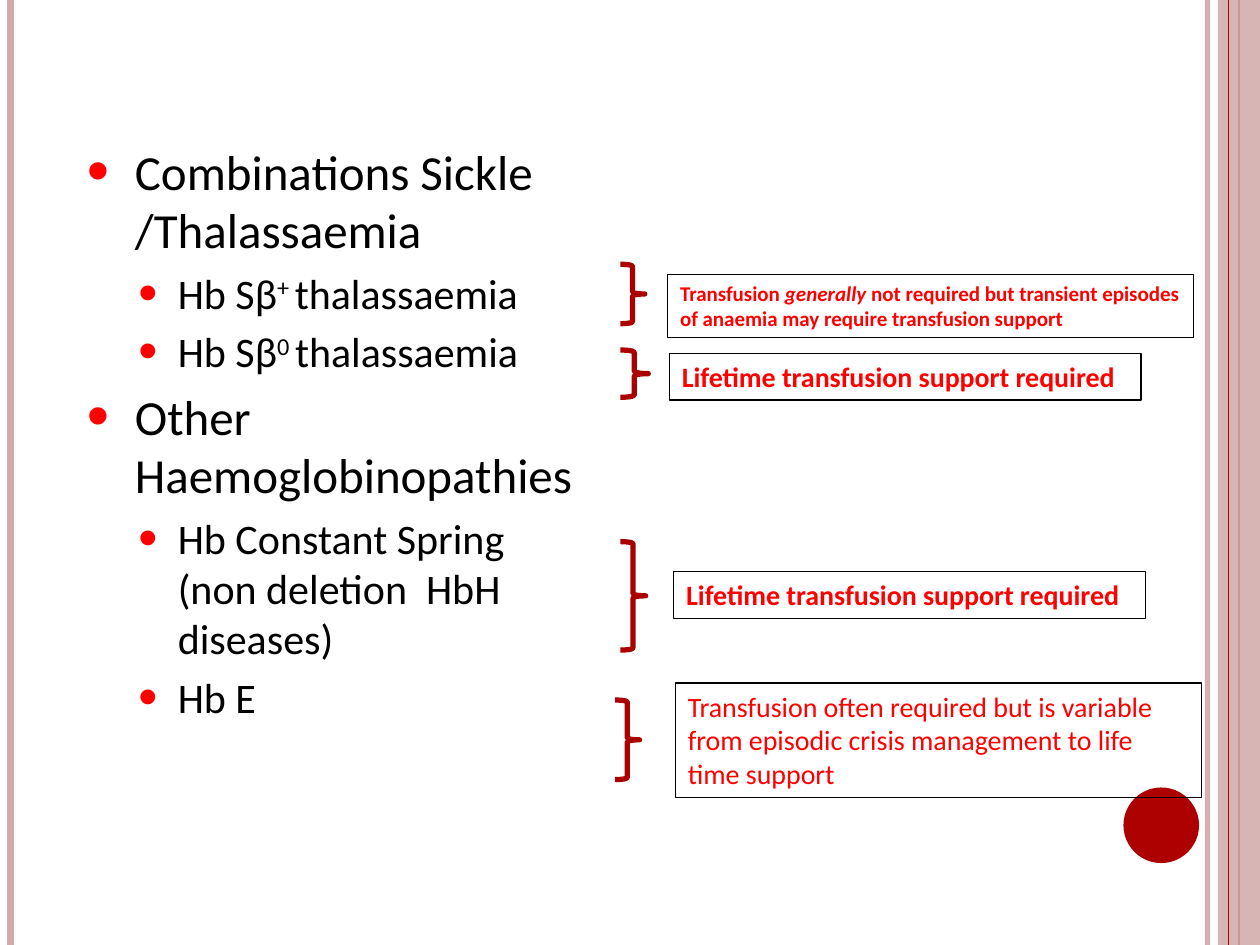
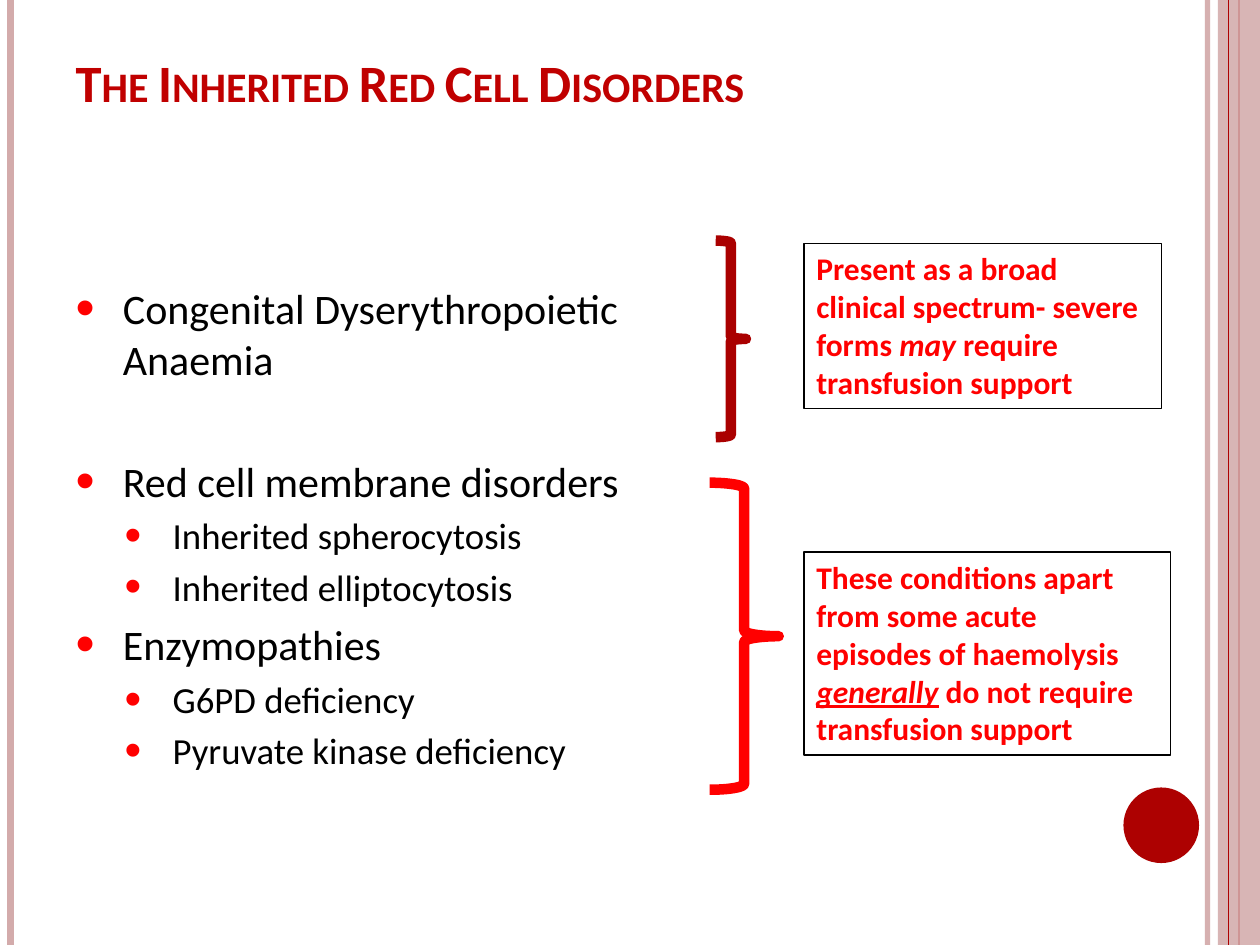
from lxml import etree
from pptx import Presentation
from pptx.dml.color import RGBColor
from pptx.enum.shapes import MSO_CONNECTOR, MSO_SHAPE
from pptx.enum.text import MSO_ANCHOR, MSO_AUTO_SIZE, PP_ALIGN
from pptx.oxml.ns import qn
from pptx.util import Pt

STRAIGHT = MSO_CONNECTOR.STRAIGHT
RECTANGLE, OVAL, BRACE = MSO_SHAPE.RECTANGLE, MSO_SHAPE.OVAL, MSO_SHAPE.RIGHT_BRACE
TOP, MIDDLE = MSO_ANCHOR.TOP, MSO_ANCHOR.MIDDLE
FIXED, GROW = MSO_AUTO_SIZE.NONE, MSO_AUTO_SIZE.SHAPE_TO_FIT_TEXT
LEFT = PP_ALIGN.LEFT

FONT = "Calibri"
COLORS = {"text": "000000", "accent": "FF0000", "title": "C00000",
          "band": "D3ABAB", "rule": "AD0101", "brace": "AA0000"}
PAGE_BOX = (0, 0, 720, 540)
INDENTS = {0: (27, -27), 1: (55.5, -27.5), 2: (80, -22.5)}


def color(name):
    """Return the named colour."""
    return RGBColor.from_string(COLORS[name])


def place(shape, box):
    """Move and size a shape to a box in points."""
    shape.left, shape.top, shape.width, shape.height = map(Pt, box)


def set_opacity(shape, percent):
    """Make the solid colour of a shape partly transparent."""
    tint = next(shape.element.iter(qn("a:srgbClr")))
    etree.SubElement(tint, qn("a:alpha"), val=str(percent * 1000))


def add_spans(para, spans, size, color_name, bold=False):
    """Add runs given as plain strings or as (text, style) pairs."""
    for span in spans:
        text, style = (span, "") if isinstance(span, str) else span
        run = para.add_run()
        run.text = text
        run.font.name, run.font.size, run.font.bold = FONT, Pt(size), bold
        run.font.color.rgb = color(color_name)
        run.font.italic = "italic" in style
        run.font.underline = "underline" in style
        if style == "superscript":
            run.font._element.set("baseline", "30000")


def add_rule(page, x, box, color_name, width):
    """Draw a vertical rule down the whole box."""
    left, top, _, height = box
    rule = page.shapes.add_connector(
        STRAIGHT, Pt(left + x), Pt(top), Pt(left + x), Pt(top + height))
    rule.line.color.rgb = color(color_name)
    rule.line.width = Pt(width)
    etree.SubElement(rule.element.spPr, qn("a:effectLst"))
    return rule


def add_solid(page, kind, box, color_name):
    """Draw a filled shape without outline."""
    shape = page.shapes.add_shape(kind, *map(Pt, box))
    shape.shadow.inherit = False
    shape.fill.solid()
    shape.fill.fore_color.rgb = color(color_name)
    shape.line.fill.background()
    return shape


def decorate_master(deck, page, box):
    """Draw the bands and the disc, then move them to the slide master."""
    left, top, width, height = box
    right, bottom = left + width, top + height
    inner = add_rule(page, width - 30, box, "band", 3)
    set_opacity(inner, 93)
    outer = add_rule(page, 6, box, "band", 4.5)
    dark = add_rule(page, width - 12, box, "rule", 1.5)
    band = add_solid(page, RECTANGLE, (right - 24, top, 24, height), "band")
    set_opacity(band, 87)
    thin = add_rule(page, width - 18, box, "rule", 0.75)
    disc = add_solid(page, OVAL, (right - 78, bottom - 90, 43.2, 43.2), "rule")
    for number, shape in enumerate((inner, outer, dark, band, thin, disc), 101):
        next(shape.element.iter(qn("p:cNvPr"))).set("id", str(number))
        deck.slide_master.shapes.element.append(shape.element)


def fill_title(page, box, text):
    """Write the small-caps title, or remove the title when there is none."""
    title = page.shapes.title
    if not text:
        title.element.getparent().remove(title.element)
        return
    place(title, box)
    frame = title.text_frame
    frame.auto_size, frame.vertical_anchor = FIXED, MIDDLE
    para = frame.paragraphs[0]
    para.alignment = LEFT
    add_spans(para, [text], 30, "title", True)
    para.runs[0].font._element.set("cap", "small")


def add_bullet(para, level):
    """Give a paragraph a red bullet and the indent of its level."""
    para.level = level
    properties = para._p.get_or_add_pPr()
    margin, indent = INDENTS[level]
    properties.set("marL", str(Pt(margin)))
    properties.set("indent", str(Pt(indent)))
    tint = etree.SubElement(properties, qn("a:buClr"))
    etree.SubElement(tint, qn("a:srgbClr"), val=COLORS["accent"])
    etree.SubElement(properties, qn("a:buSzPct"), val="130000")
    etree.SubElement(properties, qn("a:buFont"), typeface="Arial")
    etree.SubElement(properties, qn("a:buChar"), char="•")


def fill_list(page, box, items, sizes, top_margin=3.6):
    """Write (level, space before, spans) items into the body placeholder."""
    body = page.placeholders[1]
    place(body, box)
    frame = body.text_frame
    frame.auto_size, frame.vertical_anchor = FIXED, TOP
    frame.margin_top = Pt(top_margin)
    for index, (level, space, spans) in enumerate(items):
        para = frame.add_paragraph() if index else frame.paragraphs[0]
        para.alignment = LEFT
        para.space_before = Pt(space)
        add_bullet(para, level)
        add_spans(para, spans, sizes[level], "text")


def add_callout(page, box, spans, size, bold=True):
    """Draw a thin-framed note with red text."""
    note = page.shapes.add_textbox(*map(Pt, box))
    note.line.color.rgb = color("text")
    note.line.width = Pt(0.75)
    frame = note.text_frame
    frame.word_wrap, frame.auto_size = True, GROW
    add_spans(frame.paragraphs[0], spans, size, "accent", bold)


def add_brace(page, box, width, color_name="brace"):
    """Draw a right brace."""
    brace = page.shapes.add_shape(BRACE, *map(Pt, box))
    brace.shadow.inherit = False
    brace.fill.background()
    brace.line.color.rgb = color(color_name)
    brace.line.width = Pt(width)


def build_combinations(page, box):
    """Build the slide on combined and other haemoglobinopathies."""
    left, top, _, _ = box
    fill_title(page, box, "")
    fill_list(page, (left + 14.4, top + 77, 330, 427), [
        (1, 5.6, ["Combinations Sickle /Thalassaemia"]),
        (2, 4.8, ["Hb Sβ", ("+ ", "superscript"), "thalassaemia"]),
        (2, 4.8, ["Hb Sβ", ("0 ", "superscript"), "thalassaemia"]),
        (1, 5.6, ["Other Haemoglobinopathies"]),
        (2, 4.8, ["Hb Constant Spring (non deletion  HbH diseases)"]),
        (2, 4.8, ["Hb E"]),
    ], {1: 28, 2: 24})
    lifetime = ["Lifetime transfusion support required"]
    notes = [
        ((381.5, 156.7, 300.5, 36.4), ["Transfusion ", ("generally ", "italic"),
         "not required but transient episodes of anaemia may require "
         "transfusion support"], 12, True),
        ((382.5, 202, 269.5, 26.7), lifetime, 16, True),
        ((385, 326.7, 269.5, 26.7), lifetime, 16, True),
        ((386, 390.3, 300.5, 65.5), ["Transfusion often required but is variable "
         "from episodic crisis management to life time support"], 16, False),
    ]
    for (x, y, width, height), spans, size, bold in notes:
        add_callout(page, (left + x, top + y, width, height), spans, size, bold)
    for x, y, width, height in [(354.5, 151, 14, 34), (354.5, 200, 16, 27),
                                (354.5, 309.5, 14.5, 62), (351.5, 400, 14, 45.5)]:
        add_brace(page, (left + x, top + y, width, height), 3)


def build_disorders(page, box):
    """Build the slide on the inherited red cell disorders."""
    left, top, _, _ = box
    fill_title(page, (left + 36, top + 21.6, 588, 50),
               "The Inherited Red Cell Disorders")
    fill_list(page, (left + 36, top + 126, 392, 384), [
        (0, 0, ["Congenital Dyserythropoietic Anaemia"]),
        (0, 41, ["Red cell membrane disorders"]),
        (1, 4.2, ["Inherited spherocytosis"]),
        (1, 4.2, ["Inherited elliptocytosis"]),
        (0, 6, ["Enzymopathies"]),
        (1, 4.2, ["G6PD deficiency"]),
        (1, 4.2, ["Pyruvate kinase deficiency"]),
    ], {0: 24, 1: 21}, 35.5)
    add_brace(page, (left + 405.5, top + 275.8, 39.5, 175.5), 6, "accent")
    add_callout(page, (left + 459.4, top + 315.4, 209.5, 116), [
        "These conditions apart from some acute episodes of haemolysis ",
        ("generally", "italic underline"),
        " do not require transfusion support"], 18)
    add_callout(page, (left + 459.4, top + 139, 204.5, 94.5), [
        "Present as a broad clinical spectrum- severe forms ",
        ("may", "italic"), " require transfusion support"], 18)
    add_brace(page, (left + 409, top + 137.5, 17.3, 112.3), 6)


def main():
    """Build and save the deck."""
    deck = Presentation()
    deck.slide_width, deck.slide_height = map(Pt, PAGE_BOX[2:])
    layout = deck.slide_layouts[1]
    pages = [deck.slides.add_slide(layout) for _ in range(2)]
    decorate_master(deck, pages[0], PAGE_BOX)
    build_combinations(pages[0], PAGE_BOX)
    build_disorders(pages[1], PAGE_BOX)
    deck.save("out.pptx")


if __name__ == "__main__":
    main()
